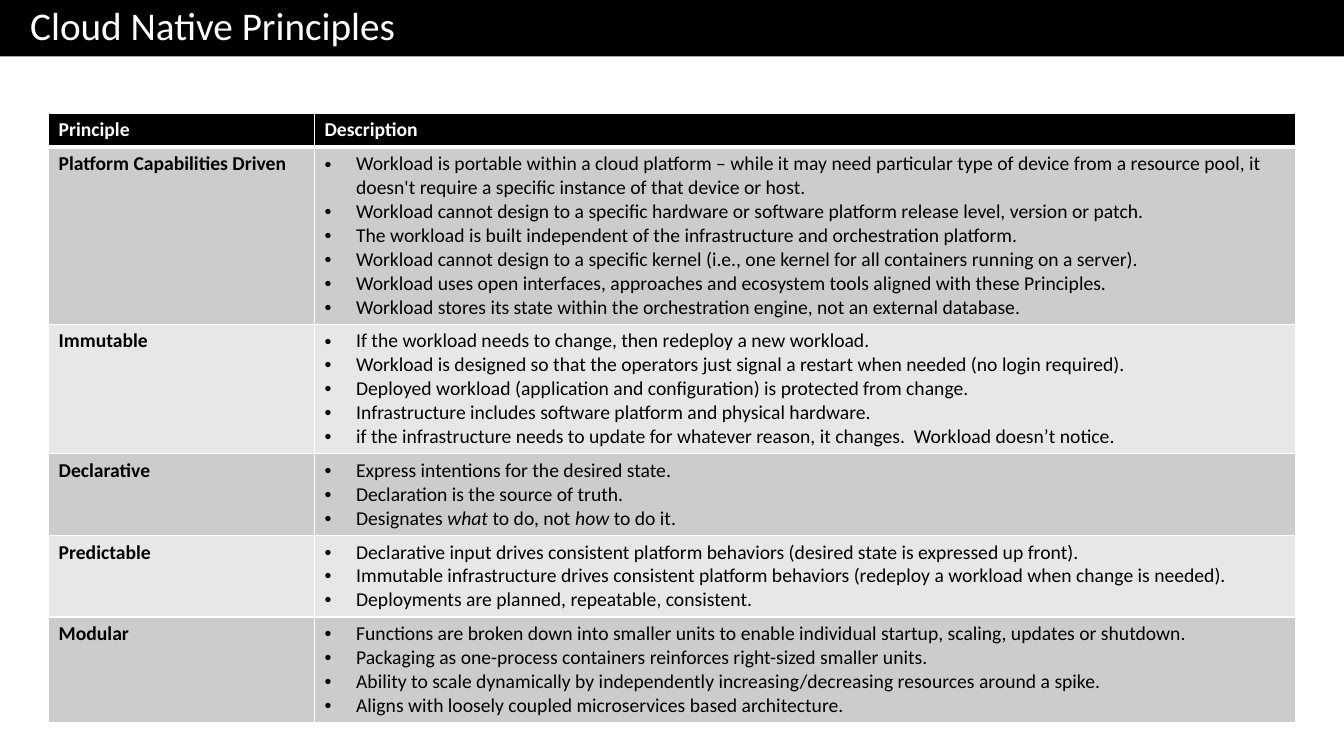
from dataclasses import dataclass

from lxml.etree import SubElement
from pptx import Presentation
from pptx.dml.color import RGBColor as RGB
from pptx.enum.shapes import MSO_SHAPE as SHAPE
from pptx.enum.text import MSO_ANCHOR as ANCHOR, PP_ALIGN as ALIGN
from pptx.oxml.ns import qn
from pptx.util import Pt


@dataclass(frozen=True)
class Theme:
    """Colours, font and type sizes of the slide."""
    black: RGB = RGB(0, 0, 0)
    white: RGB = RGB(255, 255, 255)
    bands: tuple = (RGB(0xCC, 0xCC, 0xCC), RGB(0xE7, 0xE7, 0xE7))
    font: str = "Calibri"
    title: int = 28
    body: int = 14


T = Theme()
HEADER = ("Principle", "Description")
PRINCIPLES = {
    "Platform Capabilities Driven": [
        "Workload is portable within a cloud platform – while it may need particular type of device "
        "from a resource pool, it doesn't require a specific instance of that device or host.",
        "Workload cannot design to a specific hardware or software platform release level, version or patch.",
        "The workload is built independent of the infrastructure and orchestration platform.",
        "Workload cannot design to a specific kernel (i.e., one kernel for all containers running on a server).",
        "Workload uses open interfaces, approaches and ecosystem tools aligned with these Principles.",
        "Workload stores its state within the orchestration engine, not an external database.",
    ],
    "Immutable": [
        "If the workload needs to change, then redeploy a new workload.",
        "Workload is designed so that the operators just signal a restart when needed (no login required).",
        "Deployed workload (application and configuration) is protected from change.",
        "Infrastructure includes software platform and physical hardware.",
        "if the infrastructure needs to update for whatever reason, it changes.  Workload doesn’t notice.",
    ],
    "Declarative": [
        "Express intentions for the desired state.",
        "Declaration is the source of truth.",
        "Designates *what *to do, not *how *to do it.",
    ],
    "Predictable": [
        "Declarative input drives consistent platform behaviors (desired state is expressed up front).",
        "Immutable infrastructure drives consistent platform behaviors "
        "(redeploy a workload when change is needed).",
        "Deployments are planned, repeatable, consistent.",
    ],
    "Modular": [
        "Functions are broken down into smaller units to enable individual startup, scaling, updates or shutdown.",
        "Packaging as one-process containers reinforces right-sized smaller units.",
        "Ability to scale dynamically by independently increasing/decreasing resources around a spike.",
        "Aligns with loosely coupled microservices based architecture.",
    ],
}


def add_text(p, text, size=T.body, color=T.black, bold=False):
    """Add text to a paragraph, with the parts between asterisks in italics."""
    p.alignment = ALIGN.LEFT
    for i, part in enumerate(text.split("*")):
        r = p.add_run()
        r.text = part
        f = r.font
        f.name, f.size, f.bold, f.italic = T.font, Pt(size), bold, i % 2 == 1
        f.color.rgb = color


def add_bullet(p, indent=22.5):
    """Give a paragraph a hanging round bullet."""
    pPr = p._p.get_or_add_pPr()
    pPr.set("marL", str(Pt(indent)))
    pPr.set("indent", str(-Pt(indent)))
    SubElement(pPr, qn("a:buFont")).set("typeface", "Arial")
    SubElement(pPr, qn("a:buChar")).set("char", "•")


def style_cell(cell, fill, top=1, bottom=1):
    """Set the fill of a cell and its white borders."""
    tcPr = cell._tc.get_or_add_tcPr()
    for side, width in (("L", 1), ("R", 1), ("T", top), ("B", bottom)):
        ln = SubElement(tcPr, qn(f"a:ln{side}"), w=str(Pt(width)))
        SubElement(SubElement(ln, qn("a:solidFill")), qn("a:srgbClr"), val=str(T.white))
    cell.fill.solid()
    cell.fill.fore_color.rgb = fill


def add_title_bar(s, box, text):
    """Draw the black title bar in its box."""
    sp = s.shapes.add_shape(SHAPE.RECTANGLE, *map(Pt, box))
    sp.shadow.inherit = False
    sp.fill.solid()
    sp.fill.fore_color.rgb = T.black
    sp.line.fill.background()
    tf = sp.text_frame
    tf.word_wrap = True
    tf.vertical_anchor = ANCHOR.MIDDLE
    tf.margin_left = Pt(21.6)
    p = tf.paragraphs[0]
    p.line_spacing = 0.9
    add_text(p, text, size=T.title, color=T.white)


def add_principles(s, box, name_width=190, line=17, padding=7.2):
    """Draw the table of principles, each row as tall as its lines."""
    x, y, w, h = box
    rows = len(PRINCIPLES) + 1
    tbl = s.shapes.add_table(rows, 2, Pt(x), Pt(y), Pt(w), Pt(h)).table
    tbl.columns[0].width, tbl.columns[1].width = Pt(name_width), Pt(w - name_width)
    tbl.rows[0].height = Pt(line + padding)
    for col, text in enumerate(HEADER):
        cell = tbl.cell(0, col)
        style_cell(cell, T.black, bottom=3)
        add_text(cell.text_frame.paragraphs[0], text, color=T.white, bold=True)
    for row, (name, points) in enumerate(PRINCIPLES.items(), 1):
        lines = sum(1 + (len(point) > 120) for point in points)
        tbl.rows[row].height = Pt(lines * line + padding)
        for col in range(2):
            style_cell(tbl.cell(row, col), T.bands[(row - 1) % 2], top=3 if row == 1 else 1)
        add_text(tbl.cell(row, 0).text_frame.paragraphs[0], name, bold=True)
        tf = tbl.cell(row, 1).text_frame
        for i, point in enumerate(points):
            p = tf.add_paragraph() if i else tf.paragraphs[0]
            add_bullet(p)
            add_text(p, point)


def main():
    """Build the slide and save it."""
    prs = Presentation()
    prs.slide_width, prs.slide_height = Pt(960), Pt(540)
    s = prs.slides.add_slide(prs.slide_layouts[6])
    add_title_bar(s, (0, -0.7, 960, 41), "Cloud Native Principles")
    add_principles(s, (34.7, 80.9, 891, 430))
    prs.save("out.pptx")


if __name__ == "__main__":
    main()
